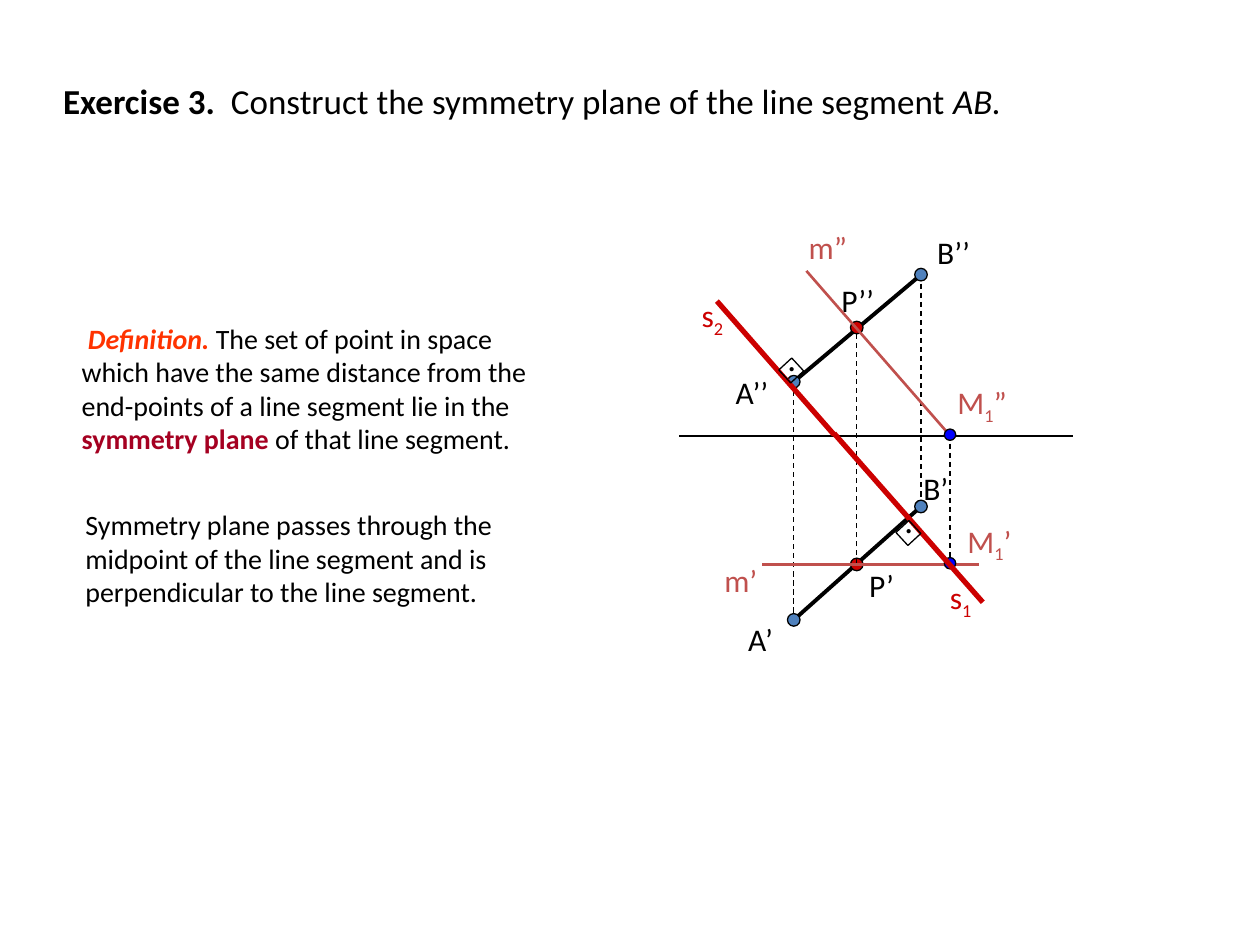
from lxml.etree import SubElement
from pptx import Presentation
from pptx.dml.color import RGBColor as RGB
from pptx.enum.dml import MSO_LINE as Dash
from pptx.enum.shapes import MSO_CONNECTOR as Link, MSO_SHAPE as Form
from pptx.enum.text import MSO_ANCHOR as Anchor, MSO_AUTO_SIZE as Fit, PP_ALIGN as Align
from pptx.oxml.ns import qn
from pptx.util import Inches, Pt

INK = {
    "black": "000000",
    "orange": "FF3300",
    "wine": "A50021",
    "point": "4F81BD",
    "rose": "C0504D",
    "red": "CC0000",
    "blue": "0000FF",
}

# Each point has a top view (1) and a front view (2).
A1, A2 = (6.3, 4.92), (6.3, 3.03)
B1, B2 = (7.31, 4.02), (7.31, 2.18)
P1, P2 = (6.8, 4.48), (6.8, 2.6)
M1, M2 = (7.54, 4.47), (7.54, 3.45)


def color(name):
    return RGB.from_string(INK[name])


def write(para, text, size=18, ink="black", bold=False, italic=False, sub=False):
    run = para.add_run()
    run.text = text
    font = run.font
    font.name, font.size = "Calibri", Pt(size)
    font.bold, font.italic = bold, italic
    font.color.rgb = color(ink)
    if sub:
        run._r.get_or_add_rPr().set("baseline", "-25000")


class Board:
    def __init__(self, slide):
        self.slide = slide
        self.shapes = slide.shapes

    def place(self, shape, left, top, width, height):
        shape.left, shape.top = Inches(left), Inches(top)
        shape.width, shape.height = Inches(width), Inches(height)

    def fill_text(self, shape, runs, **style):
        """Write runs, each a (text, format) pair, as one left-aligned paragraph."""
        frame = shape.text_frame
        frame.word_wrap = True
        frame.auto_size = Fit.NONE
        frame.vertical_anchor = Anchor.TOP
        para = frame.paragraphs[0]
        para.alignment = Align.LEFT
        for text, extra in runs:
            write(para, text, **{**style, **extra})

    def title(self, box, runs):
        shape = self.shapes.title
        self.place(shape, *box)
        self.fill_text(shape, runs, size=20)

    def text(self, box, runs, **style):
        shape = self.shapes.add_textbox(*map(Inches, box))
        self.fill_text(shape, runs, **style)

    def label(self, left, top, name, sub="", tail="", width=0.6, height=0.4, **style):
        parts = [(name, {}), (sub, {"sub": True}), (tail, {})]
        runs = [part for part in parts if part[0]]
        self.text((left, top, width, height), runs, **style)

    def line(self, start, end, ink="black", weight=0.75, dash=False):
        link = self.shapes.add_connector(
            Link.STRAIGHT, *map(Inches, (*start, *end)))
        link.line.color.rgb = color(ink)
        link.line.width = Pt(weight)
        if dash:
            link.line.dash_style = Dash.DASH
        SubElement(link._element.spPr, qn("a:effectLst"))

    def mark(self, form, center, size, ink=None, turn=0):
        left, top = (pos - size / 2 for pos in center)
        shape = self.shapes.add_shape(form, *map(Inches, (left, top, size, size)))
        shape.rotation = turn
        shape.shadow.inherit = False
        shape.line.color.rgb = color("black")
        shape.line.width = Pt(0.75)
        if ink:
            shape.fill.solid()
            shape.fill.fore_color.rgb = color(ink)
        else:
            shape.fill.background()

    def dots(self, points, ink, size=0.1):
        for point in points:
            self.mark(Form.OVAL, point, size, ink)

    def right_angle(self, center):
        x, y = center
        self.mark(Form.RECTANGLE, center, 0.14, turn=317.3)
        self.label(x - 0.13, y - 0.32, ".", width=0.22, height=0.43, size=20)


def draw_segment(board):
    board.line((5.39, 3.46), (8.52, 3.46))
    board.line(A2, B2, weight=2.25)
    board.line(A2, A1, dash=True)
    board.line(B2, B1, dash=True)
    board.line(A1, B1, weight=2.25)
    board.dots((A2, B2, B1, A1), "point")
    board.label(5.84, 4.87, "A’")
    board.label(7.23, 3.67, "B’")
    board.label(5.74, 2.91, "A’’")
    board.label(7.34, 1.8, "B’’")


def draw_middle(board):
    board.dots((P1, P2), "red")
    board.label(6.8, 4.44, "P’")
    board.line(P1, P2, dash=True)
    board.label(6.58, 2.18, "P’’")


def draw_trace(board):
    board.line((6.4, 2.15), (7.56, 3.48), "rose", 1.5)
    board.line((6.05, 4.48), (7.77, 4.48), "rose", 1.5)
    board.label(6.32, 1.76, "m”", ink="rose")
    board.label(5.65, 4.4, "m’", ink="rose")
    board.line(M2, M1, dash=True)
    board.dots((M2, M1), "blue", 0.09)
    board.label(7.5, 2.99, "M", "1", "”", width=0.66, ink="rose")
    board.label(7.58, 4.09, "M", "1", "’", width=0.66, ink="rose")


def draw_plane(board):
    board.line((6.62, 3.44), (7.8, 4.78), "red", 3)
    board.label(7.44, 4.54, "s", "1", width=0.45, ink="red")
    board.right_angle((7.21, 4.23))
    board.line((5.69, 2.39), (6.62, 3.45), "red", 3)
    board.label(5.47, 2.3, "s", "2", width=0.45, ink="red")
    board.right_angle((6.28, 2.94))


def main():
    deck = Presentation()
    deck.slide_width, deck.slide_height = Inches(10), Inches(7.5)
    board = Board(deck.slides.add_slide(deck.slide_layouts[5]))

    board.title((0.4, 0.58, 7.96, 0.44), [
        ("Exercise 3.  ", {"bold": True}),
        ("Construct the symmetry plane of the line segment ", {}),
        ("AB.", {"italic": True}),
    ])
    board.text((0.55, 2.5, 4.04, 1.18), [
        (" Definition. ", {"ink": "orange", "bold": True, "italic": True}),
        ("The set of point in space which have the same distance from the "
         "end-points of a line segment lie in the ", {}),
        ("symmetry plane ", {"ink": "wine", "bold": True}),
        ("of that line segment.", {}),
    ], size=16)
    draw_segment(board)
    board.text((0.58, 3.98, 4.03, 0.91), [
        ("Symmetry plane passes through the midpoint of the line segment "
         "and is perpendicular to the line segment.", {}),
    ], size=16)
    draw_middle(board)
    draw_trace(board)
    draw_plane(board)
    deck.save("out.pptx")


if __name__ == "__main__":
    main()
